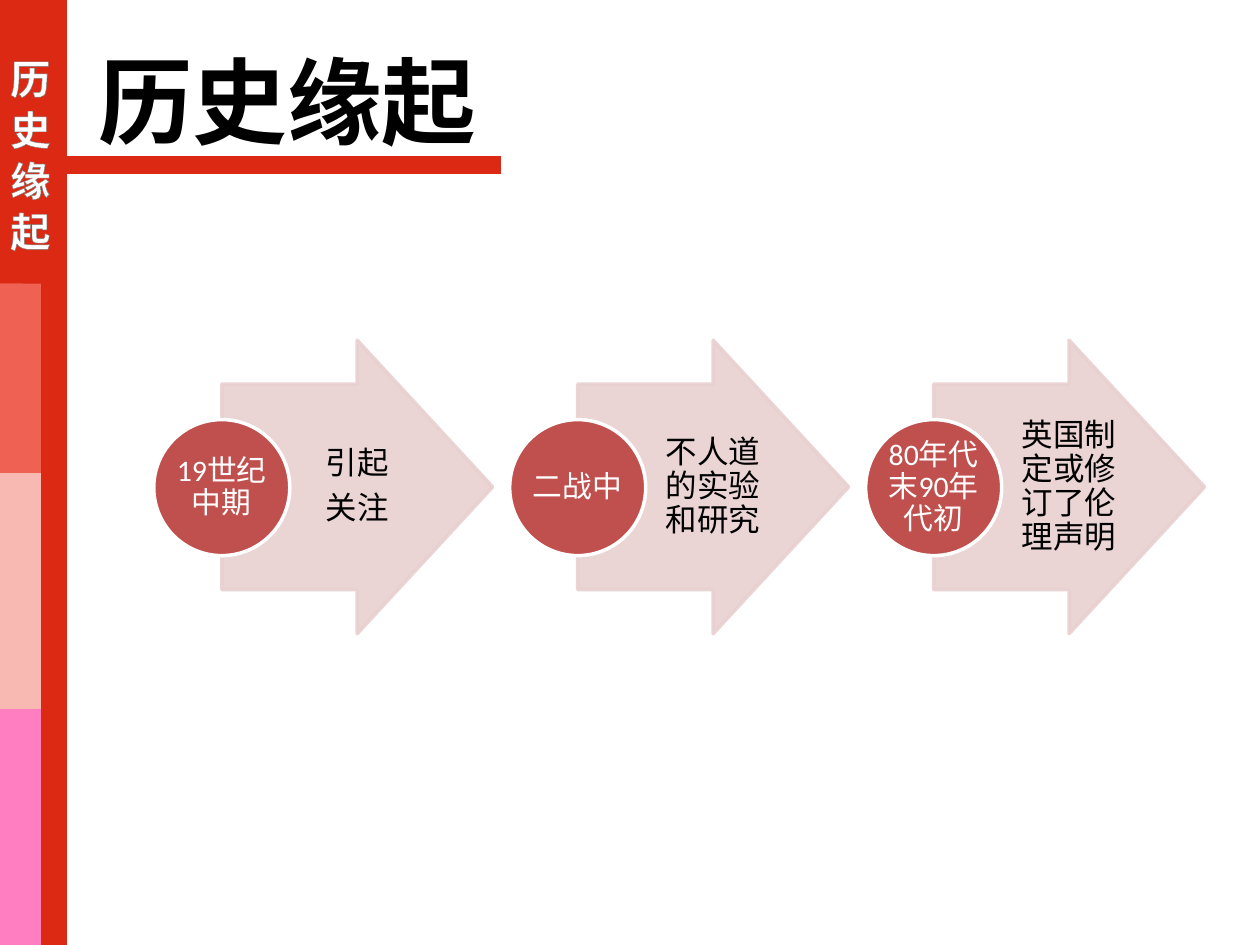
import dataclasses

import lxml.etree
import pptx
import pptx.dml.color
import pptx.enum.shapes
import pptx.enum.text
import pptx.oxml.ns
import pptx.util

EMU_PER_PX = 9144  # 100 px to the inch
SHAPE = pptx.enum.shapes.MSO_SHAPE
ALIGN = pptx.enum.text.PP_ALIGN
ANCHOR = pptx.enum.text.MSO_ANCHOR
qn = pptx.oxml.ns.qn


@dataclasses.dataclass(frozen=True)
class Theme:
    red: str = "DB2914"
    coral: str = "EF6253"
    salmon: str = "F8B9B2"
    pink: str = "FF7DC1"
    arrow: str = "E8D0D0"
    circle: str = "C0504D"
    white: str = "FFFFFF"
    black: str = "000000"
    outline: str = "808080"
    title_size: int = 54
    side_size: int = 23
    arrow_size: int = 18
    circle_size: int = 17
    title_font: str = "Times New Roman"
    latin_font: str = "Calibri"
    chinese_font: str = "Noto Sans CJK SC"


THEME = Theme()
STEPS = [
    ("19世纪中期", ["引起", "关注"]),
    ("二战中", ["不人道的实验和研究"]),
    ("80年代末90年代初", ["英国制定或修订了伦理声明"]),
]


def px(length):
    return pptx.util.Emu(round(length * EMU_PER_PX))


def rgb(color):
    return pptx.dml.color.RGBColor.from_string(color)


def add_line(shapes, start, end, color, points):
    line = shapes.add_connector(pptx.enum.shapes.MSO_CONNECTOR.STRAIGHT,
                                *map(px, start + end))
    line.line.color.rgb = rgb(color)
    line.line.width = pptx.util.Pt(points)
    lxml.etree.SubElement(line._element.spPr, qn("a:effectLst"))


def add_shape(shapes, kind, box, fill, outline, opacity=100):
    shape = shapes.add_shape(kind, *map(px, box))
    shape.shadow.inherit = False
    shape.fill.solid()
    shape.fill.fore_color.rgb = rgb(fill)
    shape.line.color.rgb = rgb(outline)
    shape.line.width = pptx.util.Pt(2)
    if opacity < 100:
        for color in shape._element.spPr.iter(qn("a:srgbClr")):
            lxml.etree.SubElement(color, qn("a:alpha"), val=str(opacity * 1000))
    return shape


def add_text(shapes, box, lines, size, font, color, bold=False, align=ALIGN.CENTER):
    text_box = shapes.add_textbox(*map(px, box))
    frame = text_box.text_frame
    frame.word_wrap = True
    frame.text = "\n".join(lines)
    for paragraph in frame.paragraphs:
        paragraph.alignment = align
        for run in paragraph.runs:
            run.font.size = pptx.util.Pt(size)
            run.font.name = font
            run.font.bold = bold
            run.font.color.rgb = rgb(color)
            lxml.etree.SubElement(run._r.rPr, qn("a:ea"), typeface=THEME.chinese_font)
    return frame


def set_compact(frame, left, right):
    """Centre the text vertically, with narrow margins and tight lines."""
    frame.vertical_anchor = ANCHOR.MIDDLE
    frame.margin_left, frame.margin_right = px(left), px(right)
    frame.margin_top = frame.margin_bottom = px(1)
    for paragraph in frame.paragraphs:
        paragraph.line_spacing = 0.9
        paragraph.space_after = pptx.util.Pt(6)


def add_sidebar(shapes, left, top, height):
    # Four colour bands, then the wide red strip beside them
    band = height / 4
    for index, color in enumerate([THEME.red, THEME.coral, THEME.salmon, THEME.pink]):
        start = top + index * band
        add_line(shapes, (left + 19, start), (left + 19, start + band), color, 30)
    add_line(shapes, (left + 20, top), (left + 18, top + 225), THEME.red, 30)
    add_line(shapes, (left + 43, top), (left + 43, top + height), THEME.red, 15)

    # Vertical chapter name
    frame = add_text(shapes, (left - 12, top + 37, 59, 176), ["历史缘起"], THEME.side_size,
                     THEME.latin_font, THEME.white, bold=True, align=ALIGN.LEFT)
    frame._txBody.bodyPr.set("vert", "eaVert")
    properties = frame.paragraphs[0].runs[0]._r.rPr
    properties.set("spc", "600")
    outline = lxml.etree.Element(qn("a:ln"), w=str(pptx.util.Pt(0.75)))
    fill = lxml.etree.SubElement(outline, qn("a:solidFill"))
    lxml.etree.SubElement(fill, qn("a:srgbClr"), val=THEME.outline)
    properties.insert(0, outline)


def add_title(shapes, left, top, width, height):
    add_line(shapes, (left + 11, top + height + 1), (left + 363, top + height + 1),
             THEME.red, 10)
    add_text(shapes, (left, top, width, height), ["历史缘起"], THEME.title_size,
             THEME.title_font, THEME.black, bold=True)


def add_step(shapes, left, top, period, event):
    # Arrow with the event
    arrow = add_shape(shapes, SHAPE.RIGHT_ARROW, (left + 54, top, 215, 233),
                      THEME.arrow, THEME.arrow, opacity=90)
    arrow.adjustments[0] = 0.7
    arrow.adjustments[1] = 0.5
    frame = add_text(shapes, (left + 108, top + 35, 105, 163), event,
                     THEME.arrow_size, THEME.chinese_font, THEME.black)
    set_compact(frame, 5, 3)

    # Circle with the period
    add_shape(shapes, SHAPE.OVAL, (left, top + 63, 108, 108), THEME.circle, THEME.white)
    frame = add_text(shapes, (left + 16, top + 79, 76, 76), [period],
                     THEME.circle_size, THEME.latin_font, THEME.white)
    set_compact(frame, 1, 1)


def add_timeline(shapes, left, top, pitch):
    group = shapes.add_group_shape()
    for index, (period, event) in enumerate(STEPS):
        add_step(group.shapes, left + index * pitch, top, period, event)


def main():
    presentation = pptx.Presentation()
    presentation.slide_width, presentation.slide_height = px(1000), px(750)
    slide = presentation.slides.add_slide(presentation.slide_layouts[6])
    add_sidebar(slide.shapes, 0, 0, 750)
    add_timeline(slide.shapes, 122, 270, 282.5)
    add_title(slide.shapes, 35, 29, 386, 101)
    presentation.save("out.pptx")


if __name__ == "__main__":
    main()
